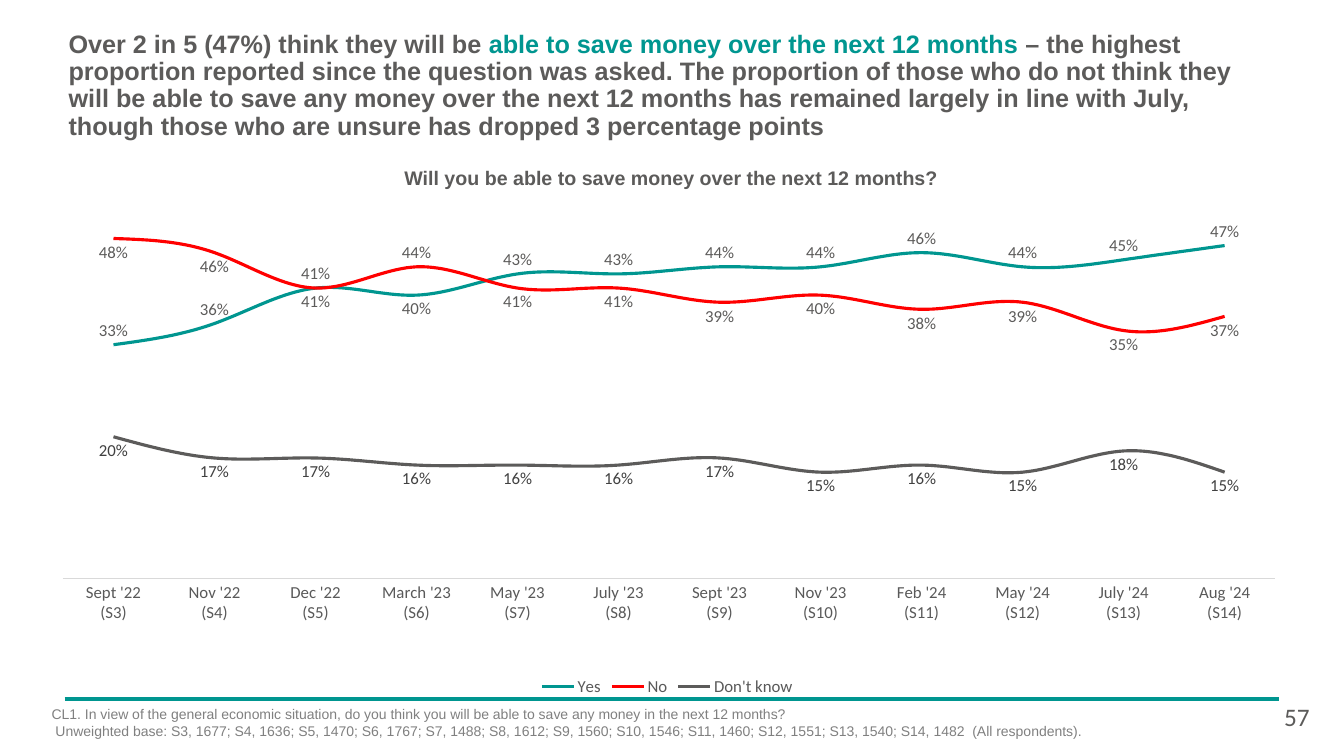
"""Builds the slide on expected saving over the next 12 months."""
from dataclasses import dataclass

from lxml import etree
from pptx import Presentation
from pptx import util as u
from pptx.chart.data import CategoryChartData
from pptx.dml.color import RGBColor
from pptx.enum import chart as ch, shapes, text
from pptx.oxml import parse_xml
from pptx.oxml.ns import nsdecls, qn

WIDTH, HEIGHT = 13.33, 7.5


@dataclass(frozen=True)
class Theme:
    """Colours, fonts and type sizes of the slide."""
    teal: str = "009690"
    red: str = "FF0000"
    grey: str = "5C5B5A"
    axis_text: str = "595959"
    dark: str = "404040"
    note: str = "808080"
    rule: str = "D9D9D9"
    sans: str = "Arial"
    chart: str = "Calibri"
    title: int = 18
    subtitle: int = 14
    label: int = 12
    small: int = 10


T = Theme()

TITLE = [
    ("Over 2 in 5 (47%) think they will be ", T.grey),
    ("able to save money over the next 12 months ", T.teal),
    ("– the highest proportion reported since the question was asked. "
     "The proportion of those who do not think they will be able to save any "
     "money over the next 12 months has remained largely in line with July, "
     "though those who are unsure has dropped 3 percentage points", T.grey),
]
QUESTION = "Will you be able to save money over the next 12 months?"
NOTES = [
    "CL1. In view of the general economic situation, do you think you will be "
    "able to save any money in the next 12 months?",
    " Unweighted base: S3, 1677; S4, 1636; S5, 1470; S6, 1767; S7, 1488; "
    "S8, 1612; S9, 1560; S10, 1546; S11, 1460; S12, 1551; S13, 1540; "
    "S14, 1482  (All respondents).",
]
MONTHS = ["Sept '22", "Nov '22", "Dec '22", "March '23", "May '23", "July '23",
          "Sept '23", "Nov '23", "Feb '24", "May '24", "July '24", "Aug '24"]
FIRST_WAVE = 3
ABOVE, BELOW = ch.XL_LABEL_POSITION.ABOVE, ch.XL_LABEL_POSITION.BELOW
SERIES = [
    ("Yes", [33, 36, 41, 40, 43, 43, 44, 44, 46, 44, 45, 47],
     T.teal, T.grey, ABOVE, {3: BELOW}),
    ("No", [48, 46, 41, 44, 41, 41, 39, 40, 38, 39, 35, 37],
     T.red, T.grey, BELOW, {3: ABOVE}),
    ("Don't know", [20, 17, 17, 16, 16, 16, 17, 15, 16, 15, 18, 15],
     T.grey, T.dark, BELOW, {}),
]
PLOT_AREA = {"x": 0.007, "y": 0.026, "w": 0.989, "h": 0.724}


def box(x, y, w, h):
    """Turn shares of the slide's size into lengths."""
    return [u.Inches(share * side) for share, side in
            zip((x, y, w, h), (WIDTH, HEIGHT, WIDTH, HEIGHT))]


def style(font, size, color, name, bold=False):
    """Format a font."""
    font.size, font.name, font.bold = u.Pt(size), name, bold
    font.color.rgb = RGBColor.from_string(color)


def add_run(p, words, size, color, name=T.sans, bold=False):
    """Append one formatted run to a paragraph."""
    r = p.add_run()
    r.text = words
    style(r.font, size, color, name, bold)


def add_title(s, place):
    """Place and fill the title placeholder."""
    sp = s.shapes.title
    sp.left, sp.top, sp.width, sp.height = place
    tf = sp.text_frame
    tf.word_wrap, tf.auto_size = True, text.MSO_AUTO_SIZE.NONE
    tf.vertical_anchor = text.MSO_ANCHOR.MIDDLE
    p = tf.paragraphs[0]
    p.alignment, p.line_spacing = text.PP_ALIGN.LEFT, 0.9
    for words, color in TITLE:
        add_run(p, words, T.title, color, bold=True)


def add_text(s, place, lines, size, color, name=T.sans, bold=False,
             align=text.PP_ALIGN.LEFT, inset=None):
    """Add a text box with one paragraph per line."""
    tf = s.shapes.add_textbox(*place).text_frame
    tf.word_wrap = True
    if inset is not None:
        tf.margin_left = tf.margin_right = inset
        tf.margin_top = tf.margin_bottom = inset
    for i, words in enumerate(lines):
        p = tf.add_paragraph() if i else tf.paragraphs[0]
        p.alignment = align
        add_run(p, words, size, color, name, bold)


def add_rule(s, x1, x2, y):
    """Draw the horizontal rule above the notes."""
    left, top, right, _ = box(x1, y, x2, 0)
    sp = s.shapes.add_connector(shapes.MSO_CONNECTOR.STRAIGHT,
                                left, top, right, top)
    sp.line.color.rgb = RGBColor.from_string(T.teal)
    sp.line.width = u.Pt(3)
    etree.SubElement(sp._element.spPr, qn("a:effectLst"))


def format_series(series, color, label_color, position, moved):
    """Format a line and its value labels."""
    series.smooth = True
    series.marker.style = ch.XL_MARKER_STYLE.NONE
    series.format.line.color.rgb = RGBColor.from_string(color)
    series.format.line.width = u.Pt(2.25)
    labels = series.data_labels
    labels.show_value, labels.position = True, position
    labels.number_format, labels.number_format_is_linked = "0%", False
    style(labels.font, T.label, label_color, T.chart)
    for index, place in moved.items():
        label = series.points[index].data_label
        style(label.font, T.label, label_color, T.chart)
        label.position = place


def set_plot_area(chart):
    """Fix the inner plot area as shares of the chart."""
    parts = "".join(f'<c:{k}Mode val="edge"/>' for k in "xy")
    parts += "".join(f'<c:{k} val="{v}"/>' for k, v in PLOT_AREA.items())
    plot = chart._chartSpace.chart.plotArea
    for old in plot.findall(qn("c:layout")):
        plot.remove(old)
    plot.insert(0, parse_xml(
        f'<c:layout {nsdecls("c")}><c:manualLayout>'
        f'<c:layoutTarget val="inner"/>{parts}</c:manualLayout></c:layout>'))


def add_line_chart(s, place):
    """Add the chart of answers by survey wave."""
    data = CategoryChartData(number_format="0%")
    data.categories = [f"{month}\n(S{wave})"
                       for wave, month in enumerate(MONTHS, FIRST_WAVE)]
    for name, percents, *_ in SERIES:
        data.add_series(name, [v / 100 for v in percents])
    chart = s.shapes.add_chart(ch.XL_CHART_TYPE.LINE, *place, data).chart
    style(chart.font, T.small, "000000", T.chart)
    chart.has_title = False
    chart.plots[0].vary_by_categories = False
    for series, (_, _, *look) in zip(chart.plots[0].series, SERIES):
        format_series(series, *look)

    values = chart.value_axis
    values.minimum_scale, values.maximum_scale = 0, 0.5
    values.has_major_gridlines = values.visible = False
    months = chart.category_axis
    months.major_tick_mark = months.minor_tick_mark = ch.XL_TICK_MARK.NONE
    months.format.line.color.rgb = RGBColor.from_string(T.rule)
    months.format.line.width = u.Pt(0.75)
    style(months.tick_labels.font, T.label, T.axis_text, T.chart)

    chart.has_legend = True
    chart.legend.position = ch.XL_LEGEND_POSITION.BOTTOM
    chart.legend.include_in_layout = False
    style(chart.legend.font, T.label, T.axis_text, T.chart)
    set_plot_area(chart)


def main():
    """Build and save the slide."""
    prs = Presentation()
    prs.slide_width, prs.slide_height = u.Inches(WIDTH), u.Inches(HEIGHT)
    s = prs.slides.add_slide(prs.slide_layouts[5])
    add_rule(s, 0.048, 0.952, 0.925)
    add_title(s, box(0.0435, 0.056, 0.912, 0.116))
    add_text(s, box(0.1365, 0.22, 0.726, 0.032), [QUESTION], T.subtitle,
             T.grey, bold=True, align=text.PP_ALIGN.CENTER, inset=0)
    add_line_chart(s, box(0.0405, 0.28, 0.912, 0.647))
    add_text(s, box(0.031, 0.927, 0.899, 0.073), NOTES, T.small, T.note)
    add_text(s, box(0.948, 0.921, 0.04, 0.053), ["57"], T.title, T.grey,
             T.chart)
    prs.save("out.pptx")


if __name__ == "__main__":
    main()
